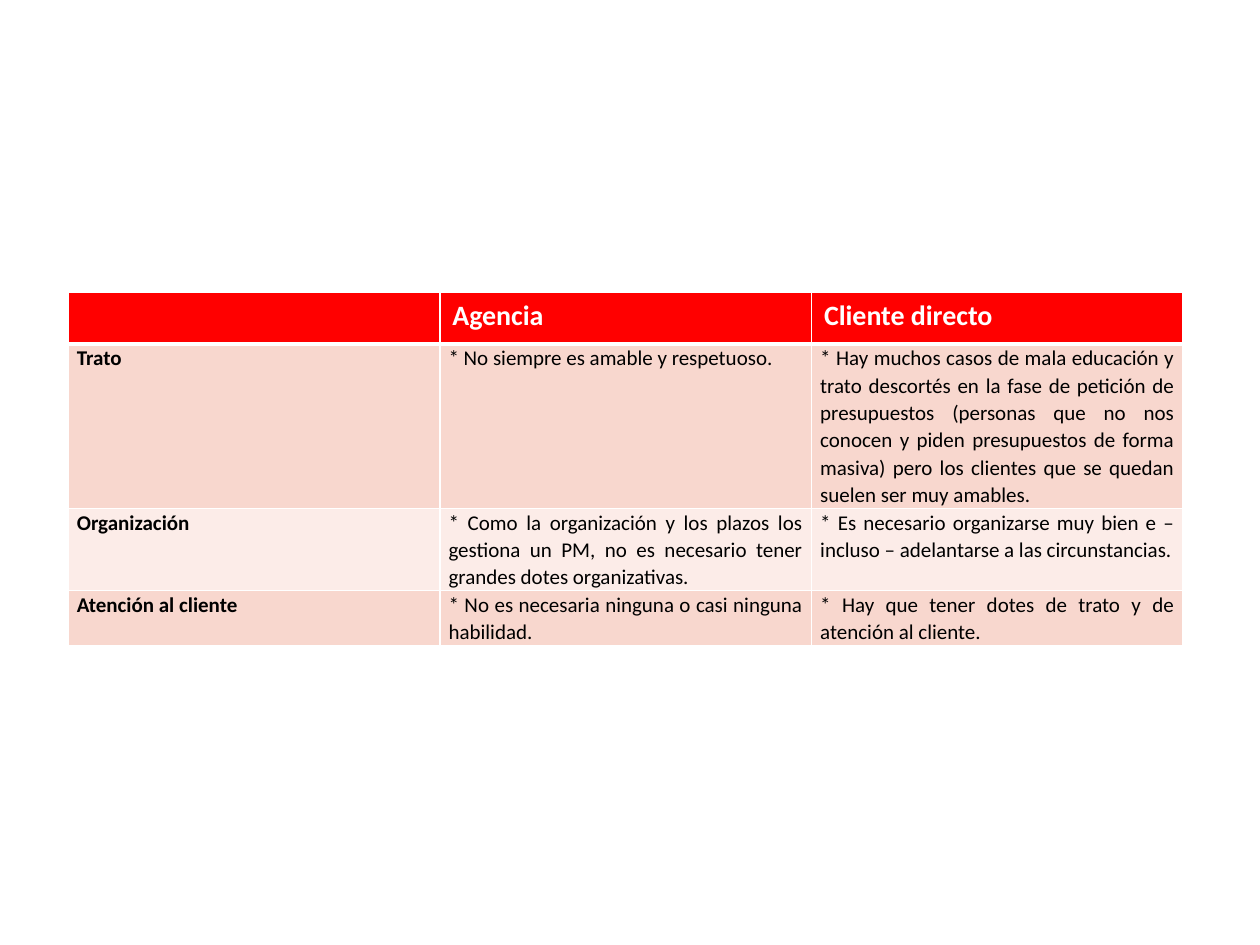
from lxml.etree import SubElement
from pptx import Presentation
from pptx.dml.color import RGBColor
from pptx.enum.text import PP_ALIGN
from pptx.oxml.ns import qn
from pptx.util import Inches, Pt

WHITE = RGBColor(0xFF, 0xFF, 0xFF)
BLACK = RGBColor(0, 0, 0)
RED = RGBColor(0xFF, 0, 0)
BAND_DARK = RGBColor(0xF8, 0xD7, 0xCE)
BAND_LIGHT = RGBColor(0xFC, 0xEC, 0xE8)

ROWS = [
    ("", "Agencia", "Cliente directo"),
    ("Trato", "* No siempre es amable y respetuoso.",
     "* Hay muchos casos de mala educación y trato descortés en la fase de "
     "petición de presupuestos (personas que no nos conocen y piden "
     "presupuestos de forma masiva) pero los clientes que se quedan suelen "
     "ser muy amables."),
    ("Organización",
     "* Como la organización y los plazos los gestiona un PM, no es necesario "
     "tener grandes dotes organizativas.",
     "* Es necesario organizarse muy bien e – incluso – adelantarse a las "
     "circunstancias."),
    ("Atención al cliente",
     "* No es necesaria ninguna o casi ninguna habilidad.",
     "* Hay que tener dotes de trato y de atención al cliente."),
]


def write_text(cell, text, size=12, color=BLACK, bold=False, alignment=None,
               line_spacing=None, space_after=None):
    """Write one formatted paragraph into a cell."""
    paragraph = cell.text_frame.paragraphs[0]
    paragraph.alignment = alignment
    paragraph.line_spacing = line_spacing
    paragraph.space_after = space_after
    font = paragraph.font
    if text:
        run = paragraph.add_run()
        run.text = text
        font = run.font
    font.name = "Calibri"
    font.size = Pt(size)
    font.bold = bold
    font.color.rgb = color


def add_borders(cell, top=1, bottom=1):
    """Give a cell white borders of the given widths in points."""
    properties = cell._tc.get_or_add_tcPr()
    widths = {"a:lnL": 1, "a:lnR": 1, "a:lnT": top, "a:lnB": bottom}
    for tag, width in widths.items():
        line = SubElement(properties, qn(tag), w=str(Pt(width)))
        fill = SubElement(line, qn("a:solidFill"))
        SubElement(fill, qn("a:srgbClr"), val=str(WHITE))


def fill_cell(cell, color):
    """Fill a cell with a solid colour."""
    cell.fill.solid()
    cell.fill.fore_color.rgb = color


def format_header_cell(cell, text):
    """Format one cell of the header row."""
    add_borders(cell, bottom=3)
    fill_cell(cell, RED)
    write_text(cell, text, size=16, color=WHITE, bold=True)


def format_body_cell(cell, text, row, column):
    """Format one cell below the header row."""
    add_borders(cell, top=3 if row == 1 else 1)
    fill_cell(cell, BAND_DARK if row % 2 else BAND_LIGHT)
    cell.margin_left = cell.margin_right = Inches(0.07)
    cell.margin_top = cell.margin_bottom = 0
    write_text(cell, text, bold=column == 0, alignment=PP_ALIGN.JUSTIFY,
               line_spacing=1.07, space_after=Pt(8))


def add_comparison_table(slide):
    """Add the table that compares agencies with direct clients."""
    table = slide.shapes.add_table(
        len(ROWS), len(ROWS[0]), Inches(0.54), Inches(2.32),
        Inches(8.85), Inches(0.41 * len(ROWS))).table
    for row, texts in enumerate(ROWS):
        for column, text in enumerate(texts):
            cell = table.cell(row, column)
            if row == 0:
                format_header_cell(cell, text)
            else:
                format_body_cell(cell, text, row, column)


def main():
    """Build and save the presentation."""
    presentation = Presentation()
    presentation.slide_width = Inches(10)
    presentation.slide_height = Inches(7.5)
    slide = presentation.slides.add_slide(presentation.slide_layouts[6])
    add_comparison_table(slide)
    presentation.save("out.pptx")


if __name__ == "__main__":
    main()
